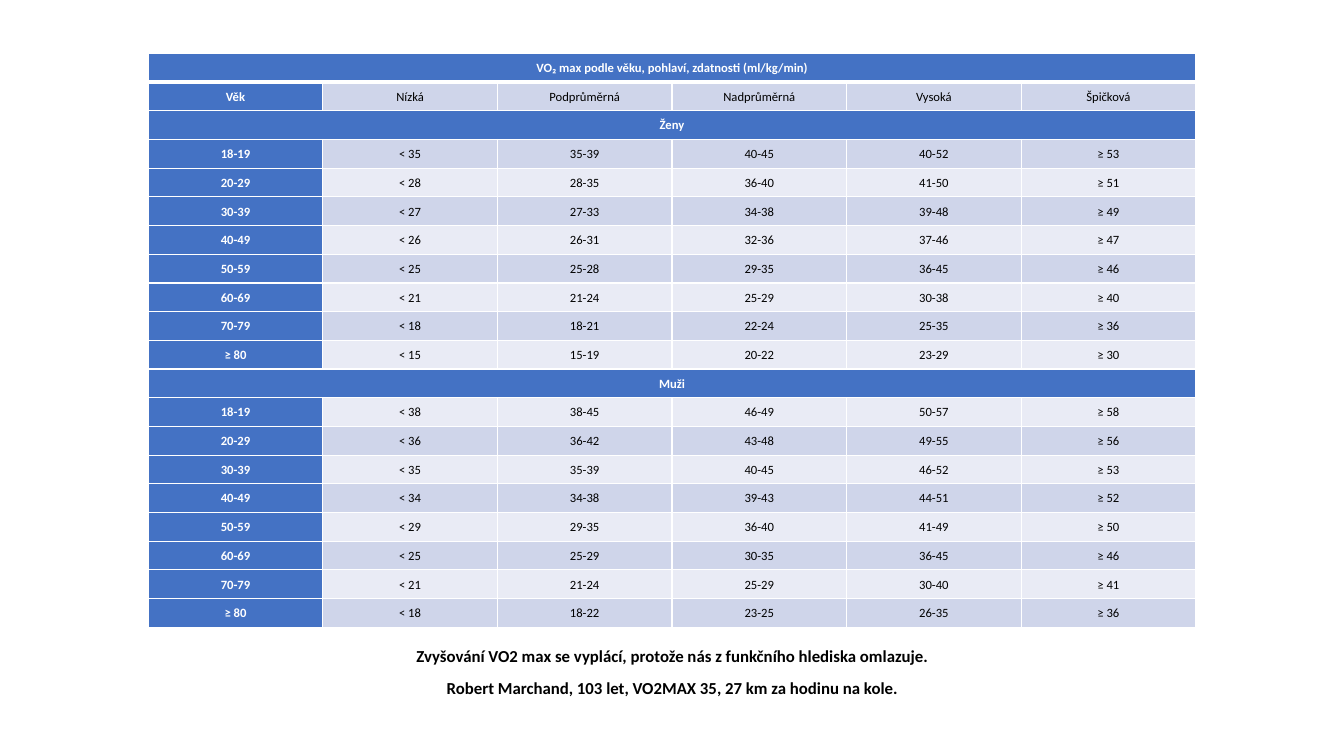
"""Build a slide with a table of VO₂ max by age, sex and fitness."""
from lxml import etree
from pptx import Presentation
from pptx.dml.color import RGBColor
from pptx.enum.text import MSO_ANCHOR, MSO_AUTO_SIZE, PP_ALIGN
from pptx.oxml.ns import qn
from pptx.util import Inches, Pt

CENTER = PP_ALIGN.CENTER
MIDDLE = MSO_ANCHOR.MIDDLE
GROW = MSO_AUTO_SIZE.SHAPE_TO_FIT_TEXT
BLANK_LAYOUT = 6
FONT = "Calibri"
CELL_MARGIN = Inches(0.04)
THIN, THICK = Pt(1), Pt(3)
COLORS = {
    "header": "4472C4",
    "dark_band": "CFD5EA",
    "light_band": "E9EBF5",
    "white": "FFFFFF",
    "black": "000000",
}
TITLE = "VO₂ max podle věku, pohlaví, zdatnosti (ml/kg/min)"
LEVELS = ["Věk", "Nízká", "Podprůměrná", "Nadprůměrná", "Vysoká", "Špičková"]
WOMEN = [
    ["18-19", "< 35", "35-39", "40-45", "40-52", "≥ 53"],
    ["20-29", "< 28", "28-35", "36-40", "41-50", "≥ 51"],
    ["30-39", "< 27", "27-33", "34-38", "39-48", "≥ 49"],
    ["40-49", "< 26", "26-31", "32-36", "37-46", "≥ 47"],
    ["50-59", "< 25", "25-28", "29-35", "36-45", "≥ 46"],
    ["60-69", "< 21", "21-24", "25-29", "30-38", "≥ 40"],
    ["70-79", "< 18", "18-21", "22-24", "25-35", "≥ 36"],
    ["≥ 80", "< 15", "15-19", "20-22", "23-29", "≥ 30"],
]
MEN = [
    ["18-19", "< 38", "38-45", "46-49", "50-57", "≥ 58"],
    ["20-29", "< 36", "36-42", "43-48", "49-55", "≥ 56"],
    ["30-39", "< 35", "35-39", "40-45", "46-52", "≥ 53"],
    ["40-49", "< 34", "34-38", "39-43", "44-51", "≥ 52"],
    ["50-59", "< 29", "29-35", "36-40", "41-49", "≥ 50"],
    ["60-69", "< 25", "25-29", "30-35", "36-45", "≥ 46"],
    ["70-79", "< 21", "21-24", "25-29", "30-40", "≥ 41"],
    ["≥ 80", "< 18", "18-22", "23-25", "26-35", "≥ 36"],
]
ROWS = [[TITLE], LEVELS, ["Ženy"], *WOMEN, ["Muži"], *MEN]
NOTES = [
    "Zvyšování VO2 max se vyplácí, protože nás z funkčního hlediska omlazuje.",
    "Robert Marchand, 103 let, VO2MAX 35, 27 km za hodinu na kole.",
]


def format_paragraph(p, size, color, bold):
    """Centre a paragraph and set its font and spacing."""
    p.alignment = CENTER
    p.line_spacing = 1.07
    p.space_after = Pt(8)
    p.font.name = FONT
    p.font.size = Pt(size)
    p.font.bold = bold
    p.font.color.rgb = RGBColor.from_string(COLORS[color])


def set_borders(cell, bottom):
    """Draw thin white cell borders, with the bottom one of the given width."""
    tcPr = cell._tc.get_or_add_tcPr()
    for side, width in {"L": THIN, "R": THIN, "T": THIN, "B": bottom}.items():
        ln = etree.SubElement(tcPr, qn(f"a:ln{side}"), w=str(width))
        fill = etree.SubElement(ln, qn("a:solidFill"))
        etree.SubElement(fill, qn("a:srgbClr"), val=COLORS["white"])


def format_cell(cell, fill, bottom):
    """Set the margins, borders, fill and font of one table cell."""
    cell.margin_left = cell.margin_right = CELL_MARGIN
    cell.margin_top = cell.margin_bottom = CELL_MARGIN
    cell.vertical_anchor = MIDDLE
    set_borders(cell, bottom)
    cell.fill.solid()
    cell.fill.fore_color.rgb = RGBColor.from_string(COLORS[fill])
    is_header = fill == "header"
    format_paragraph(cell.text_frame.paragraphs[0], 9,
                     "white" if is_header else "black", is_header)


def add_fitness_table(s):
    """Add the table, with one-item rows merged across all columns."""
    last_col = len(LEVELS) - 1
    table = s.shapes.add_table(len(ROWS), len(LEVELS), Inches(1.47),
                               Inches(0.53), Inches(10.39), Inches(5.7)).table
    table.first_row = False
    table.horz_banding = False
    for i, values in enumerate(ROWS):
        is_section = len(values) == 1
        band = "dark_band" if i % 2 else "light_band"
        bottom = THICK if i == 0 else THIN
        for j, text in enumerate(values):
            table.cell(i, j).text = text
        for j in range(len(LEVELS)):
            fill = "header" if is_section or j == 0 else band
            format_cell(table.cell(i, j), fill, bottom)
        if is_section:
            table.cell(i, 0).merge(table.cell(i, last_col))


def add_notes(s):
    """Add the closing lines under the table."""
    tf = s.shapes.add_textbox(Inches(3.78), Inches(6.34),
                              Inches(5.78), Inches(0.64)).text_frame
    tf.word_wrap = True
    tf.auto_size = GROW
    tf.text = "\n".join(NOTES)
    for p in tf.paragraphs:
        format_paragraph(p, 12, "black", True)


def main():
    """Build and save the slide."""
    prs = Presentation()
    prs.slide_width = Inches(13.33)
    prs.slide_height = Inches(7.5)
    s = prs.slides.add_slide(prs.slide_layouts[BLANK_LAYOUT])
    add_fitness_table(s)
    add_notes(s)
    prs.save("out.pptx")


if __name__ == "__main__":
    main()
